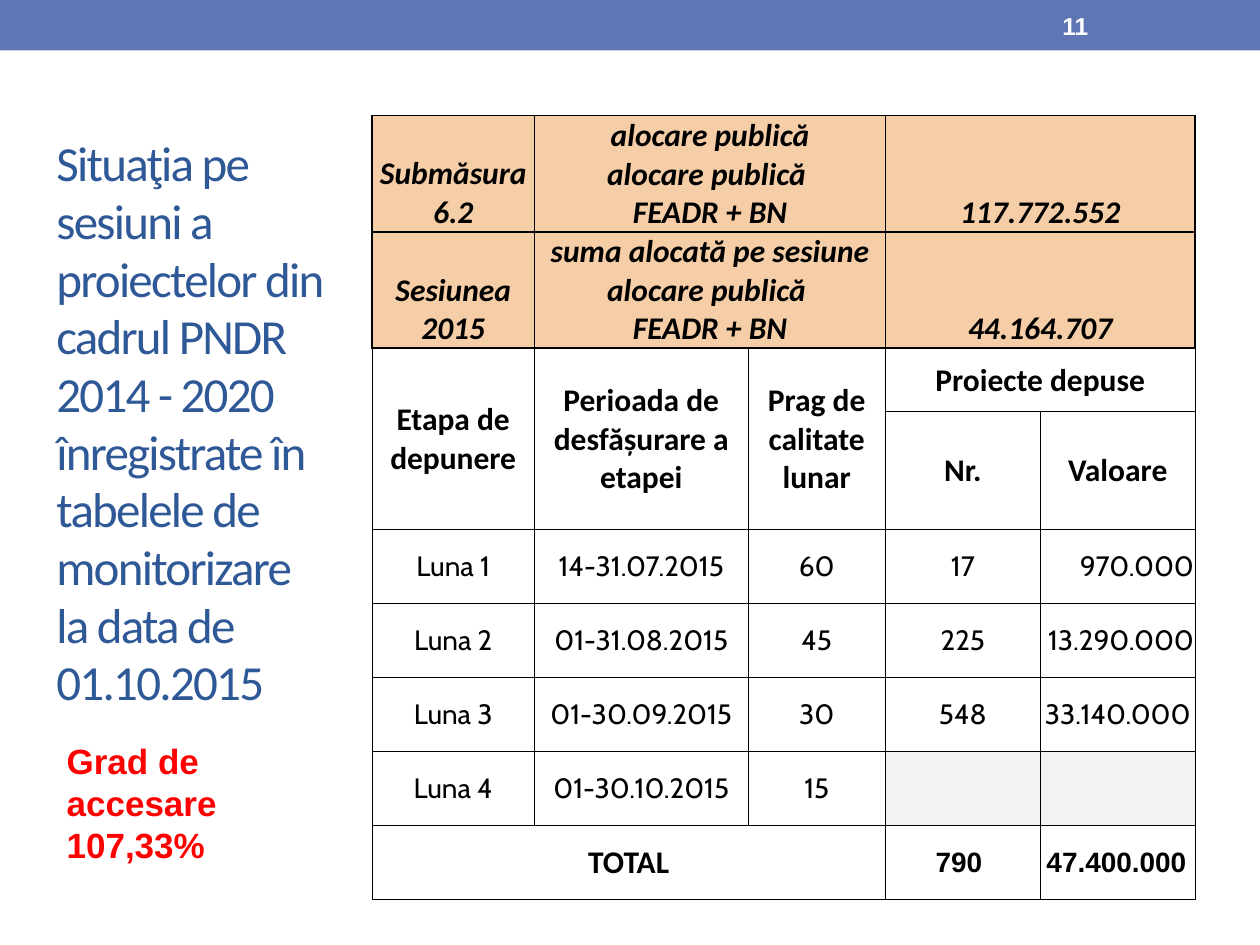
from lxml import etree
from pptx import Presentation
from pptx.dml.color import RGBColor
from pptx.enum.shapes import MSO_SHAPE
from pptx.enum.text import MSO_ANCHOR, PP_ALIGN
from pptx.oxml.ns import qn
from pptx.util import Pt

RECT = MSO_SHAPE.RECTANGLE
TOP, MIDDLE, BOTTOM = MSO_ANCHOR.TOP, MSO_ANCHOR.MIDDLE, MSO_ANCHOR.BOTTOM
LEFT, CENTER, RIGHT = PP_ALIGN.LEFT, PP_ALIGN.CENTER, PP_ALIGN.RIGHT

COL_WIDTHS = [93, 122, 78.5, 88.5, 88.5]
ROW_HEIGHTS = [66.5, 66.5, 36, 67.5] + [42.3] * 5
SESSION_ROWS = 2
HEADING_ROWS = 4
# (row, column, last row, last column)
MERGES = [(0, 1, 0, 2), (0, 3, 0, 4), (1, 1, 1, 2), (1, 3, 1, 4),
          (2, 0, 3, 0), (2, 1, 3, 1), (2, 2, 3, 2), (2, 3, 2, 4), (8, 0, 8, 2)]
ROWS = [
    ["Submăsura 6.2", "alocare publică\nalocare publică \nFEADR + BN", "", "117.772.552", ""],
    ["Sesiunea 2015", "suma alocată pe sesiune\nalocare publică \nFEADR + BN", "", "44.164.707", ""],
    ["Etapa de depunere", "Perioada de desfășurare a etapei", "Prag de calitate lunar",
     "Proiecte depuse", ""],
    ["", "", "", "Nr.", "Valoare"],
    ["Luna 1", "14-31.07.2015", "60", "17", "970.000"],
    ["Luna 2", "01-31.08.2015", "45", "225", "13.290.000"],
    ["Luna 3", "01-30.09.2015", "30", "548", "33.140.000"],
    ["Luna 4", "01-30.10.2015", "15", "", ""],
    ["TOTAL", "", "", "790 ", "47.400.000 "],
]
RIGHT_ALIGNED = {(4, 4), (5, 4), (8, 4)}
NOT_YET_OPEN = {(7, 3), (7, 4)}


def rgb(value):
    return RGBColor.from_string(value)


def add_run(p, text, size, font, color, bold=False, italic=False):
    r = p.add_run()
    r.text = text
    r.font.size = Pt(size)
    r.font.name = font
    r.font.bold = bold
    r.font.italic = italic
    r.font.color.rgb = rgb(color)
    return r


def add_bar(s, x, y, w, h, color):
    sp = s.shapes.add_shape(RECT, Pt(x), Pt(y), Pt(w), Pt(h))
    sp.shadow.inherit = False
    sp.fill.solid()
    sp.fill.fore_color.rgb = rgb(color)
    sp.line.fill.background()


def add_text(s, x, y, w, h, text, size, font, color, bold=False, anchor=TOP):
    tf = s.shapes.add_textbox(Pt(x), Pt(y), Pt(w), Pt(h)).text_frame
    tf.word_wrap = True
    tf.vertical_anchor = anchor
    p = tf.paragraphs[0]
    p.alignment = LEFT
    add_run(p, text, size, font, color, bold)
    return tf


def add_title(s, text):
    tf = add_text(s, 25.2, 343.5, 168.5, 99.5, text, 28, "Calibri", "2F5897", anchor=BOTTOM)
    tf.margin_bottom = Pt(36)
    p = tf.paragraphs[0]
    p.line_spacing = 0.98
    p.runs[0].font._element.set("spc", "-100")


def set_borders(cell, widths):
    """Draw black lines; widths are left, right, top, bottom."""
    tc_pr = cell._tc.get_or_add_tcPr()
    for side, width in zip("LRTB", widths):
        ln = etree.SubElement(tc_pr, qn(f"a:ln{side}"), w=str(Pt(width)))
        fill = etree.SubElement(ln, qn("a:solidFill"))
        etree.SubElement(fill, qn("a:srgbClr"), val="000000")


def cell_font(row, col):
    """Return size, font, bold and italic for a table cell."""
    if row < HEADING_ROWS:
        return 18, "Calibri", True, row < SESSION_ROWS
    if row == len(ROWS) - 1:
        return (18, "Calibri", True, False) if col == 0 else (16, "Arial", True, False)
    return 16, "Cabin", False, False


def cell_borders(row):
    if row < SESSION_ROWS:
        return [1] * 4
    return [0.5, 0.5, 1 if row == SESSION_ROWS else 0.5, 0.5]


def fill_cell(cell, row, col, text):
    cell.margin_left = cell.margin_right = cell.margin_top = Pt(0.7)
    cell.margin_bottom = 0
    cell.vertical_anchor = BOTTOM if row < SESSION_ROWS else MIDDLE
    set_borders(cell, cell_borders(row))
    if row < SESSION_ROWS or (row, col) in NOT_YET_OPEN:
        cell.fill.solid()
        cell.fill.fore_color.rgb = rgb("F5CEA7" if row < SESSION_ROWS else "F2F2F2")
    else:
        cell.fill.background()
    if not text:
        return
    size, font, bold, italic = cell_font(row, col)
    tf = cell.text_frame
    for i, line in enumerate(text.split("\n")):
        p = tf.add_paragraph() if i else tf.paragraphs[0]
        p.alignment = RIGHT if (row, col) in RIGHT_ALIGNED else CENTER
        add_run(p, line, size, font, "000000", bold, italic)


def add_session_table(s, x, y):
    frame = s.shapes.add_table(len(ROWS), len(COL_WIDTHS), Pt(x), Pt(y),
                               Pt(sum(COL_WIDTHS)), Pt(sum(ROW_HEIGHTS)))
    table = frame.table
    table.first_row = table.horz_banding = False
    for column, width in zip(table.columns, COL_WIDTHS):
        column.width = Pt(width)
    for row, height in zip(table.rows, ROW_HEIGHTS):
        row.height = Pt(height)
    for top, left, bottom, right in MERGES:
        table.cell(top, left).merge(table.cell(bottom, right))
    for row, texts in enumerate(ROWS):
        for col, text in enumerate(texts):
            fill_cell(table.cell(row, col), row, col, text)


def main():
    prs = Presentation()
    prs.slide_width, prs.slide_height = Pt(720), Pt(540)
    s = prs.slides.add_slide(prs.slide_layouts[6])
    add_bar(s, 0, 0, 720, 28.8, "6076B4")
    add_title(s, "Situaţia pe sesiuni a proiectelor din cadrul PNDR 2014 - 2020 "
                 "înregistrate în tabelele de monitorizare la data de 01.10.2015")
    add_session_table(s, 212.5, 66)
    add_text(s, 600, 1.5, 84, 26, "11", 14, "Arial", "FFFFFF", True, MIDDLE)
    add_text(s, 31, 419, 158.5, 80, "Grad de accesare 107,33%", 20, "Arial", "FF0000", True)
    prs.save("out.pptx")


if __name__ == "__main__":
    main()
